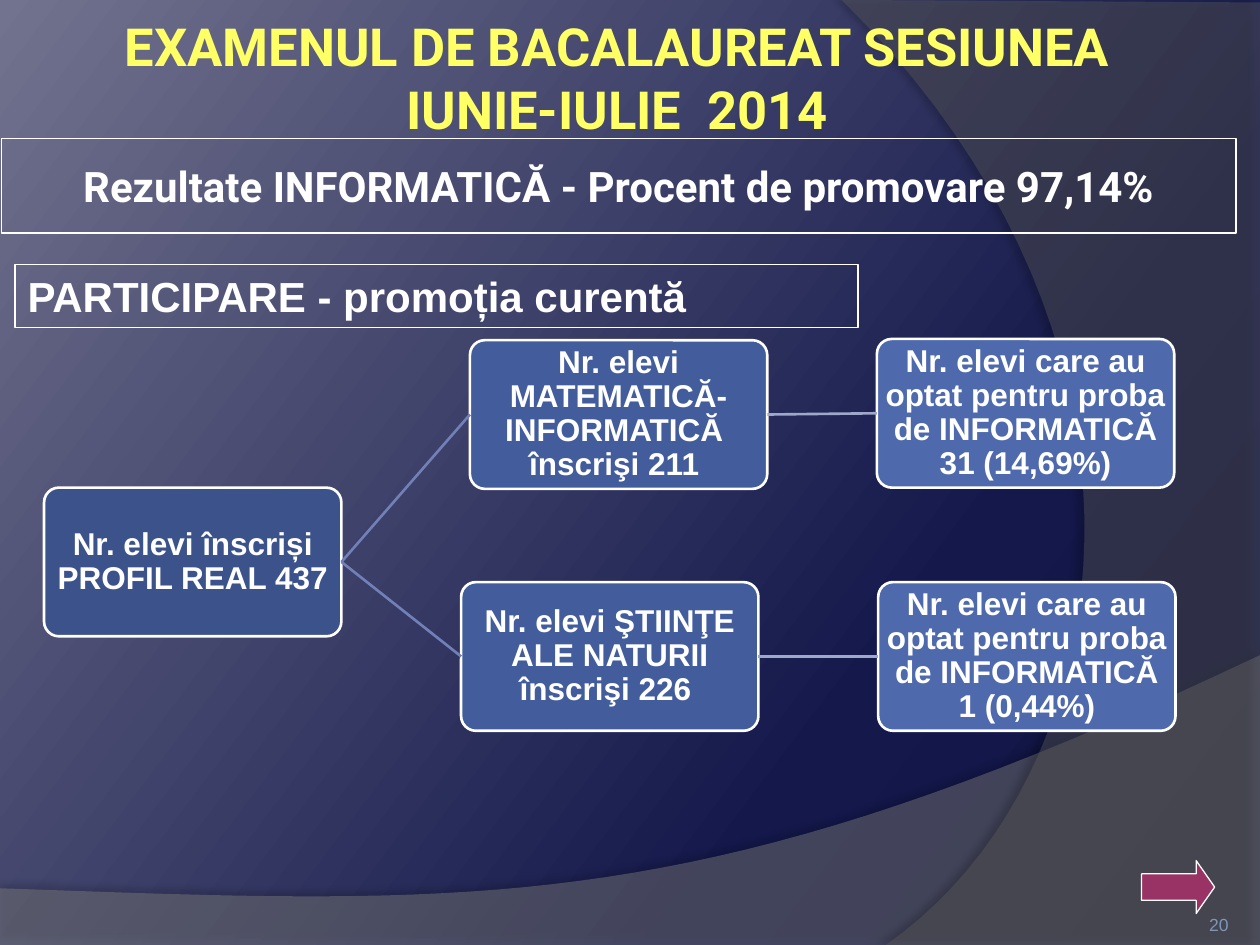
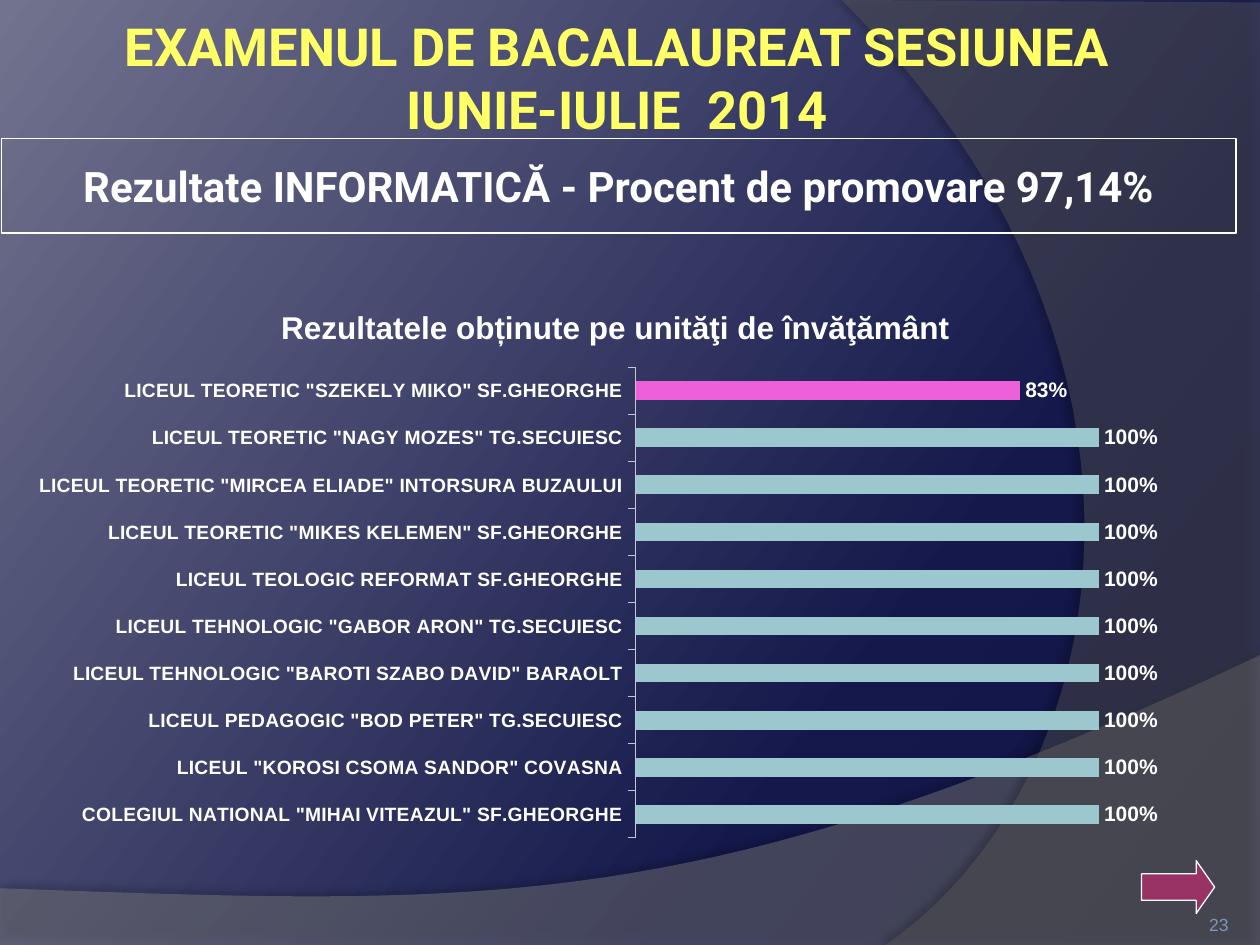
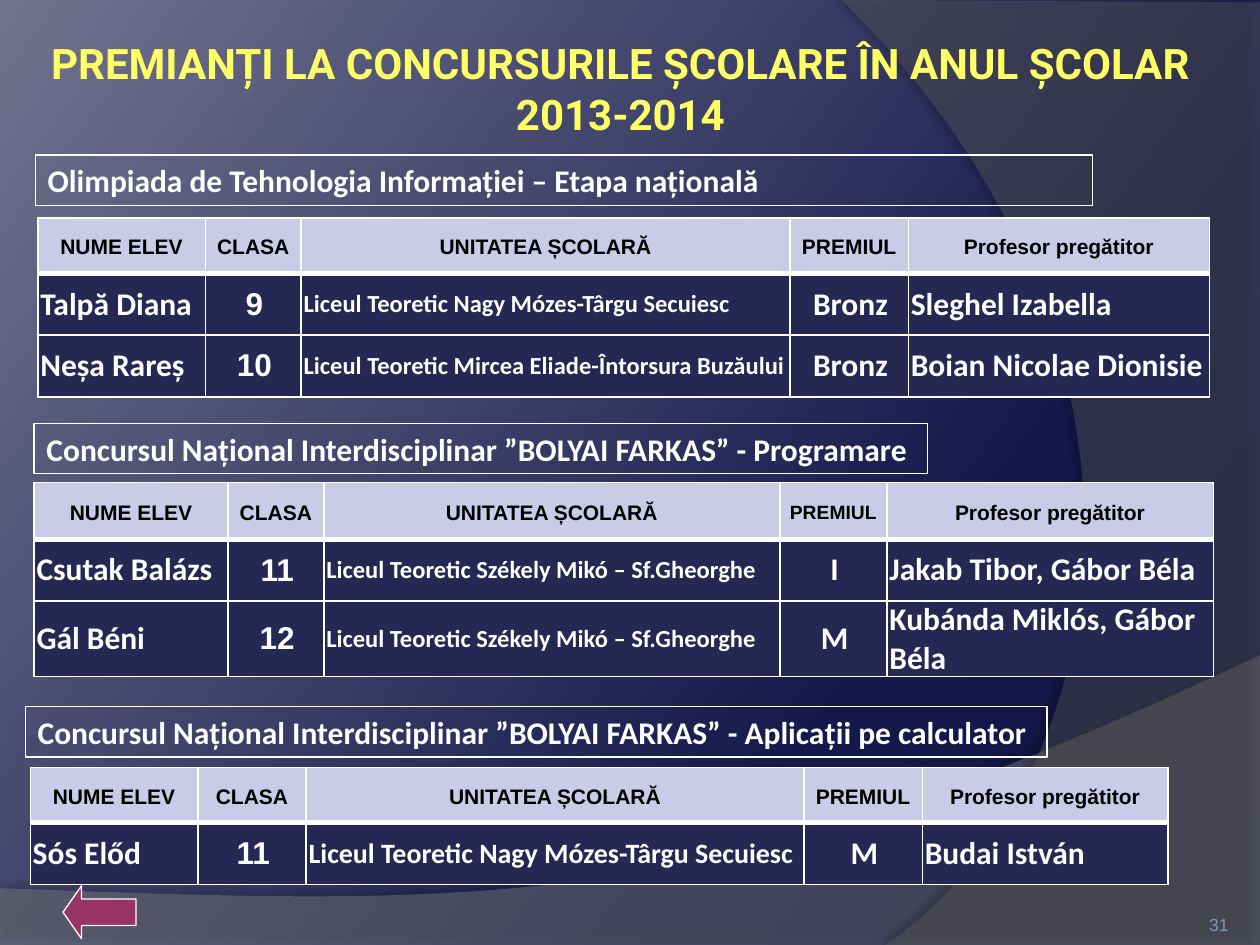
from pptx import Presentation
from pptx import util as u
from pptx.chart.data import CategoryChartData
from pptx.dml.color import RGBColor
from pptx.enum import chart as charts, lang, shapes, text
from pptx.oxml import parse_xml
from pptx.oxml.ns import nsdecls, qn

HUE = {
    "night": "10143F", "deep": "14184B", "haze": "72738E",
    "sweep": "7F7F7F", "side": "5E5E5E", "shade": "000000",
    "white": "FFFFFF", "black": "000000", "title": "FFFF66", "page": "7F96B8",
    "arrow": "993366", "root": "3B528A", "branch": "435D9C", "leaf": "4F69AD",
    "link": "7181B7", "twig": "A0A8CA", "axis": "C4C6D6",
    "bar": "9CC7CE", "low": "EE60DA", "head": "C9CBE7", "body": "242852",
}
ALIGN = {"l": text.PP_ALIGN.LEFT, "c": text.PP_ALIGN.CENTER, "r": text.PP_ALIGN.RIGHT}
ANCHOR = {"m": text.MSO_ANCHOR.MIDDLE, "b": text.MSO_ANCHOR.BOTTOM}
SIDES = ("margin_left", "margin_top", "margin_right", "margin_bottom")
RECT, ROUND, LEFT = (shapes.MSO_SHAPE.RECTANGLE, shapes.MSO_SHAPE.ROUNDED_RECTANGLE,
                     shapes.MSO_SHAPE.LEFT_ARROW)


def write(frame, words, hue, name, size, bold=True, align="l", gap=1.0):
    for i, line in enumerate(words.split("\n")):
        para = frame.add_paragraph() if i else frame.paragraphs[0]
        para.alignment, para.line_spacing = ALIGN[align], gap
        run = para.add_run()
        run.text = line
        for key, val in {"name": name, "size": u.Pt(size), "bold": bold}.items():
            setattr(run.font, key, val)
        run.font.color.rgb = RGBColor.from_string(HUE[hue])
        # Romanian comma forms of the letters in Roboto and Calibri
        if name != "Arial":
            run.font.language_id = lang.MSO_LANGUAGE_ID.ROMANIAN


def box(slide, kind, at, fill=None, line=None, inset=(0.1, 0.05, 0.1, 0.05), anchor="m"):
    at = [u.Inches(n) for n in at]
    item = slide.shapes.add_shape(kind, *at) if kind else slide.shapes.add_textbox(*at)
    item.shadow.inherit = False
    if fill:
        item.fill.solid()
        item.fill.fore_color.rgb = RGBColor.from_string(HUE[fill])
    else:
        item.fill.background()
    if line:
        item.line.color.rgb = RGBColor.from_string(HUE["white"])
        item.line.width = u.Pt(line)
    frame = item.text_frame
    frame.word_wrap, frame.vertical_anchor = True, ANCHOR[anchor]
    for side, val in zip(SIDES, inset):
        setattr(frame, side, u.Inches(val))
    return item


deck = Presentation()
deck.slide_width, deck.slide_height = u.Inches(10), u.Inches(7.5)

# Shared background gradient
master = deck.slide_master
master.background.fill.gradient()
grad = master.element.find(".//" + qn("a:gradFill"))
stops = "".join(f'<a:gs pos="{pos * 1000}"><a:srgbClr val="{HUE[hue]}"/></a:gs>'
                for pos, hue in ((0, "night"), (30, "deep"), (100, "haze")))
grad.getparent().replace(grad, parse_xml(
    f'<a:gradFill {nsdecls("a")} rotWithShape="1"><a:gsLst>{stops}</a:gsLst>'
    f'<a:lin ang="{217 * 60000}" scaled="0"/></a:gradFill>'))

# Shared bands: corners, curve controls and end, colour, opacity, shadow
bands = [
    ([(0, 7.05), (0, 7.5), (10, 7.5), (10, 5.2)],
     [(5.59, 7.29), (3.91, 7.19), (0, 7.05)], "sweep", 45, (35, 4, 3.5, 270)),
    ([(10, 0.02), (10, 7.5), (7.03, 7.5)],
     [(8.91, 6.19), (9.47, 2.75), (6.68, 0)], "side", 40, (45, 4, 4, 180)),
]
exam = ("EXAMENUL DE BACALAUREAT SESIUNEA\nIUNIE-IULIE  2014", 30, (0.01, 0.13, 9.8, 0.98))
prize = ("PREMIANȚI LA CONCURSURILE ŞCOLARE ÎN ANUL ŞCOLAR 2013-2014", 24,
         (0.25, 0.13, 9.37, 0.97))
right, left = (9.06, 6.83, 180), (0.5, 7.03, 0)

# Frame of every slide: bands, title, result box, arrow, page number
slides = []
for (head, size, at), page, (x, y, turn) in ((exam, "20", right), (exam, "23", right),
                                             (prize, "31", left)):
    slide = deck.slides.add_slide(deck.slide_layouts[6])
    slides.append(slide)
    for corners, curve, hue, alpha, (dark, blur, dist, way) in bands:
        knots = [corners[-1]] + curve
        points = list(corners)
        for step in range(1, 41):
            t = step / 40
            mix = ((1 - t) ** 3, 3 * t * (1 - t) ** 2, 3 * t * t * (1 - t), t ** 3)
            points.append([sum(m * k[i] for m, k in zip(mix, knots)) for i in (0, 1)])
        points = [(u.Inches(a), u.Inches(b)) for a, b in points]
        edge = slide.shapes.build_freeform(*points[0])
        edge.add_line_segments(points[1:], close=True)
        band = edge.convert_to_shape()
        band.fill.solid()
        band.fill.fore_color.rgb = RGBColor.from_string(HUE[hue])
        band.line.fill.background()
        band.shadow.inherit = False
        band.element.find(".//" + qn("a:srgbClr")).append(
            parse_xml(f'<a:alpha {nsdecls("a")} val="{alpha * 1000}"/>'))
        band.element.find(".//" + qn("a:effectLst")).append(parse_xml(
            f'<a:outerShdw {nsdecls("a")} blurRad="{u.Pt(blur)}" dist="{u.Pt(dist)}" '
            f'dir="{way * 60000}" rotWithShape="0"><a:srgbClr val="{HUE["shade"]}">'
            f'<a:alpha val="{dark * 1000}"/></a:srgbClr></a:outerShdw>'))
    title = box(slide, None, at, inset=(0, 0, 0.02, 0), anchor="b")
    write(title.text_frame, head, "title", "Roboto", size, align="c")
    if head == exam[0]:
        rate = box(slide, RECT, (0.01, 1.1, 9.8, 0.75), line=0.75, inset=[0.05] * 4)
        write(rate.text_frame, "Rezultate INFORMATICĂ - Procent de promovare 97,14%",
              "white", "Roboto", 24, align="c")
    arrow = box(slide, LEFT, (x, y, 0.58, 0.42), "arrow", 0.75)
    arrow.adjustments[0], arrow.adjustments[1] = 0.5, 0.35
    arrow.rotation = turn
    number = box(slide, None, (8.92, 7.02, 0.83, 0.4), inset=[0] * 4, anchor="b")
    write(number.text_frame, page, "page", "Arial", 10, False, "r")

tree, graph, prizes = slides

# Slide 1: tree of pupils
label = box(tree, RECT, (0.12, 2.1, 6.69, 0.5), line=0.75)
write(label.text_frame, "PARTICIPARE - promoția curentă", "white", "Arial", 24)
nodes = []
for x, y, hue, words in (
    (0.35, 3.87, "root", "Nr. elevi înscriși PROFIL REAL 437"),
    (3.73, 2.7, "branch", "Nr. elevi MATEMATICĂ-INFORMATICĂ  înscrişi 211 "),
    (6.96, 2.69, "leaf", "Nr. elevi care au optat pentru proba de INFORMATICĂ 31 (14,69%)"),
    (3.66, 4.62, "branch", "Nr. elevi ŞTIINŢE ALE NATURII înscrişi 226 "),
    (6.97, 4.62, "leaf", "Nr. elevi care au optat pentru proba de INFORMATICĂ 1 (0,44%)"),
):
    node = box(tree, ROUND, (x, y, 2.36, 1.18), hue, 1.5, [0.01] * 4)
    node.adjustments[0] = 0.1
    write(node.text_frame, words, "white", "Arial", 18, align="c", gap=0.9)
    nodes.append(node)
for a, b, hue in ((0, 1, "link"), (0, 3, "link"), (1, 2, "twig"), (3, 4, "twig")):
    link = tree.shapes.add_connector(shapes.MSO_CONNECTOR.STRAIGHT, 0, 0, 0, 0)
    link.begin_connect(nodes[a], 3)
    link.end_connect(nodes[b], 1)
    link.line.color.rgb = RGBColor.from_string(HUE[hue])
    link.line.width = u.Pt(1.5)
    link.element.spPr.append(parse_xml(f'<a:effectLst {nsdecls("a")}/>'))

# Slide 2: results by school
data = CategoryChartData(number_format="0%")
data.categories = [
    'COLEGIUL NATIONAL "MIHAI VITEAZUL" SF.GHEORGHE',
    'LICEUL "KOROSI CSOMA SANDOR" COVASNA',
    'LICEUL PEDAGOGIC "BOD PETER" TG.SECUIESC',
    'LICEUL TEHNOLOGIC "BAROTI SZABO DAVID" BARAOLT',
    'LICEUL TEHNOLOGIC "GABOR ARON" TG.SECUIESC',
    'LICEUL TEOLOGIC REFORMAT SF.GHEORGHE',
    'LICEUL TEORETIC "MIKES KELEMEN" SF.GHEORGHE',
    'LICEUL TEORETIC "MIRCEA ELIADE" INTORSURA BUZAULUI',
    'LICEUL TEORETIC "NAGY MOZES" TG.SECUIESC',
    'LICEUL TEORETIC "SZEKELY MIKO" SF.GHEORGHE',
]
data.add_series("Series 1", [1] * 9 + [0.83])
chart = graph.shapes.add_chart(charts.XL_CHART_TYPE.BAR_CLUSTERED, u.Inches(0.12),
                               u.Inches(2.25), u.Inches(9.53), u.Inches(4.49), data).chart
chart.has_legend = False
chart.has_title = True
write(chart.chart_title.text_frame, "Rezultatele obținute pe unităţi de învăţământ",
      "white", "Arial", 18)
chart.chart_title.include_in_layout = False
plot = chart.plots[0]
plot.gap_width, plot.vary_by_categories, plot.has_data_labels = 150, False, True
marks = plot.data_labels
for key, val in {"show_value": True, "number_format": "0%", "number_format_is_linked": False,
                 "position": charts.XL_LABEL_POSITION.OUTSIDE_END}.items():
    setattr(marks, key, val)
cats, vals = chart.category_axis, chart.value_axis
cats.major_tick_mark = charts.XL_TICK_MARK.OUTSIDE
cats.format.line.color.rgb = RGBColor.from_string(HUE["axis"])
for key, val in {"visible": False, "has_major_gridlines": False,
                 "minimum_scale": 0, "maximum_scale": 1.2}.items():
    setattr(vals, key, val)
for font, size, bold in ((chart.font, 10, False), (cats.tick_labels.font, 11, True),
                         (marks.font, 12, True)):
    font.name, font.size, font.bold = "Arial", u.Pt(size), bold
    font.color.rgb = RGBColor.from_string(HUE["white"])
bars = plot.series[0]
for part, hue in ((bars, "bar"), (bars.points[9], "low")):
    part.format.fill.solid()
    part.format.fill.fore_color.rgb = RGBColor.from_string(HUE[hue])

# Slide 3: label and table of each contest
heads = ("NUME ELEV", "CLASA", "UNITATEA ȘCOLARĂ", "PREMIUL", "Profesor pregătitor")
contests = [
    ("Olimpiada de Tehnologia Informaţiei – Etapa naţională", (0.28, 1.23, 8.39, 0.4),
     (0.3, 1.73), (1.33, 0.76, 3.88, 0.94, 2.39), (0.44, 0.49, 0.49), 12, 14,
     [("Talpă Diana", "9", "Liceul Teoretic Nagy Mózes-Târgu Secuiesc", "Bronz",
       "Sleghel Izabella"),
      ("Neșa Rareș", "10", "Liceul Teoretic Mircea Eliade-Întorsura Buzăului", "Bronz",
       "Boian Nicolae Dionisie")]),
    ("Concursul Național Interdisciplinar ”BOLYAI FARKAS” - Programare",
     (0.27, 3.36, 7.09, 0.4),
     (0.27, 3.83), (1.54, 0.76, 3.62, 0.85, 2.59), (0.45, 0.49, 0.6), 11, 14,
     [("Csutak Balázs", "11", "Liceul Teoretic Székely Mikó – Sf.Gheorghe", "I",
       "Jakab Tibor, Gábor Béla"),
      ("Gál Béni", "12", "Liceul Teoretic Székely Mikó – Sf.Gheorghe", "M",
       "Kubánda Miklós, Gábor Béla")]),
    ("Concursul Național Interdisciplinar ”BOLYAI FARKAS” - Aplicații pe calculator",
     (0.2, 5.61, 8.11, 0.4),
     (0.24, 6.09), (1.33, 0.86, 3.95, 0.94, 1.95), (0.44, 0.49), 12, 16,
     [("Sós Előd", "11", "Liceul Teoretic Nagy Mózes-Târgu Secuiesc", "M",
       "Budai István")]),
]
for name, at, (x, y), wide, high, award, school, rows in contests:
    label = box(prizes, RECT, at, line=0.75)
    write(label.text_frame, name, "white", "Calibri", 18)
    grid = prizes.shapes.add_table(len(high), len(wide), u.Inches(x), u.Inches(y),
                                   u.Inches(sum(wide)), u.Inches(sum(high))).table
    for col, size in zip(grid.columns, wide):
        col.width = u.Inches(size)
    for row, size in zip(grid.rows, high):
        row.height = u.Inches(size)
    for r, row in enumerate([heads] + rows):
        for c, words in enumerate(row):
            cell = grid.cell(r, c)
            cell.vertical_anchor = ANCHOR["m"]
            for side, val in zip(SIDES, (0.02, 0, 0, 0) if r else (0.07, 0, 0.07, 0)):
                setattr(cell, side, u.Inches(val))
            cell.fill.solid()
            cell.fill.fore_color.rgb = RGBColor.from_string(HUE["body" if r else "head"])
            if r:
                write(cell.text_frame, words, "white", "Arial" if c == 1 else "Calibri",
                      school if c == 2 else 18, align="c" if c in (1, 3) else "l")
            else:
                write(cell.text_frame, words, "black", "Arial", award if c == 3 else 12,
                      align="c", gap=1.15)
            # White borders, thick below the head row
            props = cell._tc.get_or_add_tcPr()
            for i, edge in enumerate("LRTB"):
                thick = (r, edge) in ((0, "B"), (1, "T"))
                props.insert(i, parse_xml(
                    f'<a:ln{edge} {nsdecls("a")} w="{u.Pt(3 if thick else 1)}"><a:solidFill>'
                    f'<a:srgbClr val="{HUE["white"]}"/></a:solidFill></a:ln{edge}>'))

deck.save("out.pptx")
